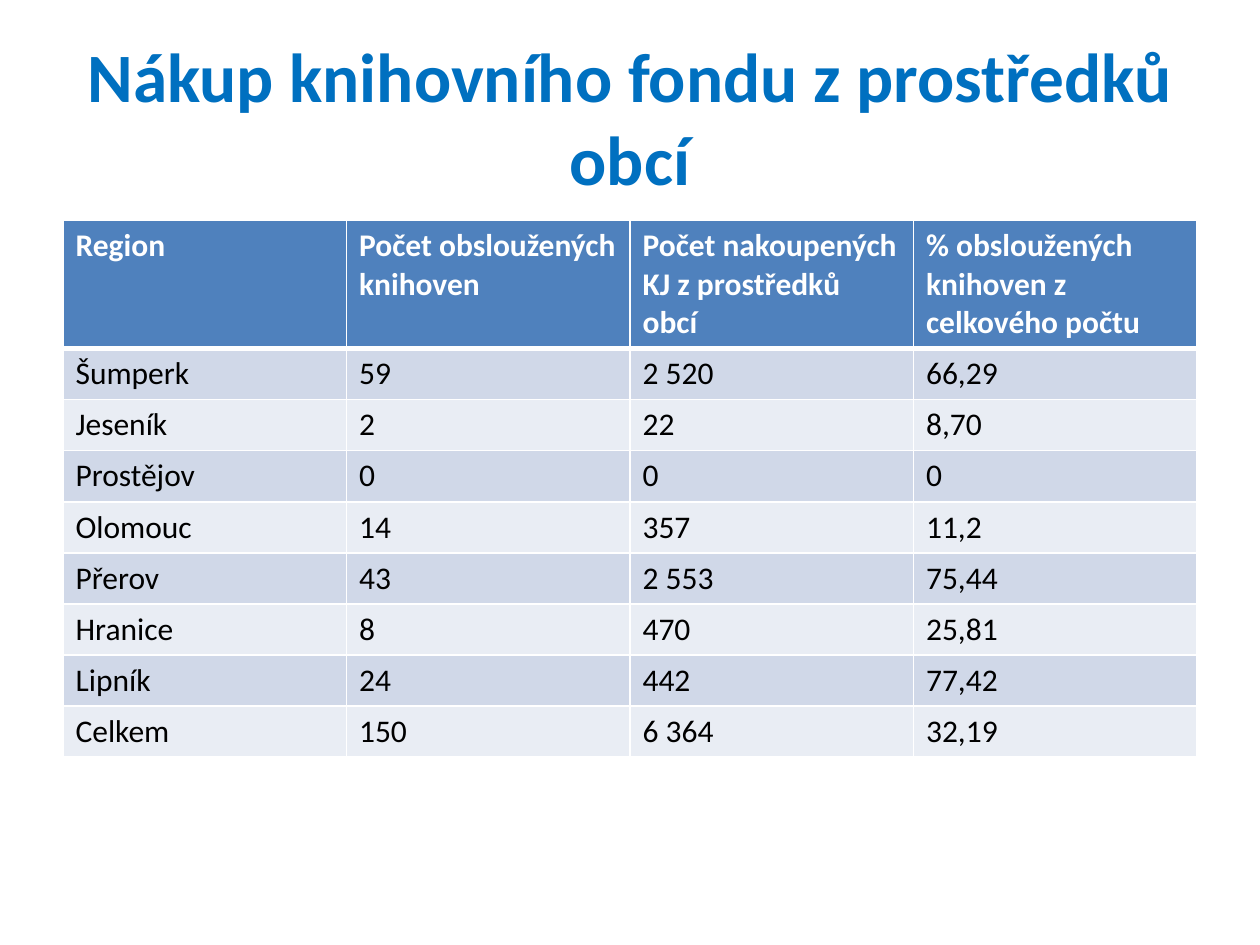
from lxml.etree import SubElement
from pptx import Presentation
from pptx.dml.color import RGBColor
from pptx.enum.text import MSO_ANCHOR, PP_ALIGN
from pptx.oxml.ns import qn
from pptx.util import Pt

FONT = "Calibri"
COLORS = {
    "title": "0070C0",
    "header": "4F81BD",
    "odd": "D0D8E8",
    "even": "E9EDF4",
    "white": "FFFFFF",
    "text": "000000",
}
ROWS = [
    ("Region", "Počet obsloužených knihoven",
     "Počet nakoupených KJ z prostředků obcí",
     "% obsloužených knihoven z celkového počtu"),
    ("Šumperk", "59", "2 520", "66,29"),
    ("Jeseník", "2", "22", "8,70"),
    ("Prostějov", "0", "0", "0"),
    ("Olomouc", "14", "357", "11,2"),
    ("Přerov", "43", "2 553", "75,44"),
    ("Hranice", "8", "470", "25,81"),
    ("Lipník", "24", "442", "77,42"),
    ("Celkem", "150", "6 364", "32,19"),
]
HEADER_HEIGHT = 73


def rgb(name):
    return RGBColor.from_string(COLORS[name])


def set_font(p, size, color, bold):
    p.font.name = FONT
    p.font.size = Pt(size)
    p.font.bold = bold
    p.font.color.rgb = rgb(color)


def set_borders(cell, top, bottom):
    """Draw white cell borders; top and bottom are widths in points."""
    tc_pr = cell._tc.get_or_add_tcPr()
    for side, width in (("L", 1), ("R", 1), ("T", top), ("B", bottom)):
        ln = SubElement(tc_pr, qn(f"a:ln{side}"), w=str(Pt(width)))
        fill = SubElement(ln, qn("a:solidFill"))
        SubElement(fill, qn("a:srgbClr"), val=COLORS["white"])


def add_title(s, text, x, y, w, h):
    sp = s.shapes.title
    sp.left, sp.top, sp.width, sp.height = Pt(x), Pt(y), Pt(w), Pt(h)
    tf = sp.text_frame
    tf.text = text
    tf.word_wrap = True
    tf.vertical_anchor = MSO_ANCHOR.MIDDLE
    p = tf.paragraphs[0]
    p.alignment = PP_ALIGN.CENTER
    set_font(p, 39.6, "title", True)


def add_region_table(s, rows, x, y, w, h):
    table = s.shapes.add_table(len(rows), len(rows[0]),
                               Pt(x), Pt(y), Pt(w), Pt(h)).table
    for column in table.columns:
        column.width = Pt(w / len(rows[0]))
    for i, values in enumerate(rows):
        header = i == 0
        table.rows[i].height = Pt(
            HEADER_HEIGHT if header else (h - HEADER_HEIGHT) / (len(rows) - 1))
        fill = "header" if header else "odd" if i % 2 else "even"
        for j, value in enumerate(values):
            cell = table.cell(i, j)
            cell.text = value
            set_borders(cell, 3 if i == 1 else 1, 3 if header else 1)
            cell.fill.solid()
            cell.fill.fore_color.rgb = rgb(fill)
            set_font(cell.text_frame.paragraphs[0], 18,
                     "white" if header else "text", header)


def main():
    prs = Presentation()
    prs.slide_width, prs.slide_height = Pt(720), Pt(540)
    s = prs.slides.add_slide(prs.slide_layouts[5])
    add_title(s, "Nákup knihovního fondu z prostředků obcí", 36, 21.6, 648, 90)
    add_region_table(s, ROWS, 36, 126, 648, 306)
    prs.save("out.pptx")


if __name__ == "__main__":
    main()
